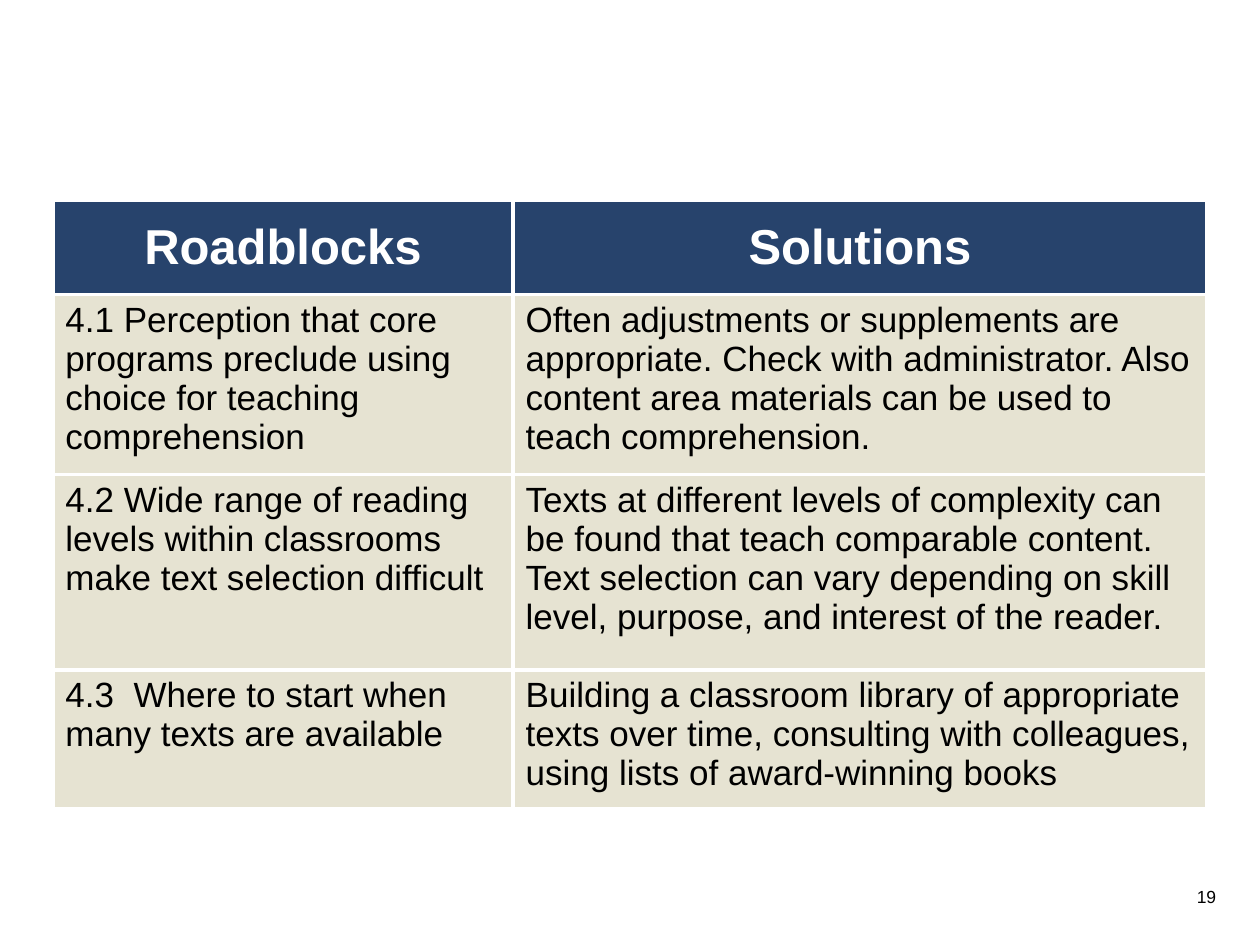
from dataclasses import dataclass

from lxml.etree import SubElement
from pptx import Presentation
from pptx.dml.color import RGBColor
from pptx.enum.text import MSO_ANCHOR, PP_ALIGN
from pptx.oxml.ns import qn
from pptx.util import Pt


@dataclass(frozen=True)
class Theme:
    font: str = "Arial"
    header_fill: str = "27436C"
    body_fill: str = "E6E3D2"
    light: str = "FFFFFF"
    dark: str = "000000"
    header_size: int = 28
    body_size: int = 20
    number_size: int = 10
    border: float = 2.25


theme = Theme()


def write_text(frame, text, align, size, color, bold=False):
    para = frame.paragraphs[0]
    para.alignment = align
    span = para.add_run()
    span.text = text
    values = {"name": theme.font, "size": Pt(size), "bold": bold}
    for name, value in values.items():
        setattr(span.font, name, value)
    span.font.color.rgb = RGBColor.from_string(color)


def add_borders(cell):
    properties = cell._tc.get_or_add_tcPr()
    for side in ("lnL", "lnR", "lnT", "lnB"):
        line = SubElement(properties, qn(f"a:{side}"), w=str(Pt(theme.border)))
        fill = SubElement(line, qn("a:solidFill"))
        SubElement(fill, qn("a:srgbClr"), val=theme.light)


# Slide
deck = Presentation()
deck.slide_width, deck.slide_height = Pt(720), Pt(540)
page = deck.slides.add_slide(deck.slide_layouts[6])

# Table of roadblocks and solutions
rows = [
    ("Roadblocks", "Solutions"),
    (
        "4.1 Perception that core programs preclude using choice for teaching comprehension",
        "Often adjustments or supplements are appropriate. Check with administrator. "
        "Also content area materials can be used to teach comprehension.",
    ),
    (
        "4.2 Wide range of reading levels within classrooms make text selection difficult",
        "Texts at different levels of complexity can be found that teach comparable content. "
        "Text selection can vary depending on skill level, purpose, and interest of the reader.",
    ),
    (
        "4.3  Where to start when many texts are available",
        "Building a classroom library of appropriate texts over time, "
        "consulting with colleagues, using lists of award-winning books",
    ),
]
column_widths = [263, 396.5]
row_heights = [54, 103, 111.6, 79.2]

table = page.shapes.add_table(
    len(rows), len(column_widths), Pt(30.2), Pt(114.2),
    Pt(sum(column_widths)), Pt(sum(row_heights)),
).table
for column, width in zip(table.columns, column_widths):
    column.width = Pt(width)
for row, height in zip(table.rows, row_heights):
    row.height = Pt(height)

header_style = {"align": PP_ALIGN.CENTER, "size": theme.header_size,
                "color": theme.light, "bold": True}
body_style = {"align": PP_ALIGN.LEFT, "size": theme.body_size, "color": theme.dark}

for row_index, texts in enumerate(rows):
    is_header = row_index == 0
    fill_color = theme.header_fill if is_header else theme.body_fill
    for column_index, text in enumerate(texts):
        cell = table.cell(row_index, column_index)
        add_borders(cell)
        cell.fill.solid()
        cell.fill.fore_color.rgb = RGBColor.from_string(fill_color)
        cell.vertical_anchor = MSO_ANCHOR.MIDDLE if is_header else MSO_ANCHOR.TOP
        write_text(cell.text_frame, text, **(header_style if is_header else body_style))

# Page number
box = page.shapes.add_textbox(Pt(671.8), Pt(502.6), Pt(30.2), Pt(19.4))
box.text_frame.word_wrap = True
write_text(box.text_frame, "19", PP_ALIGN.RIGHT, theme.number_size, theme.dark)

deck.save("out.pptx")
